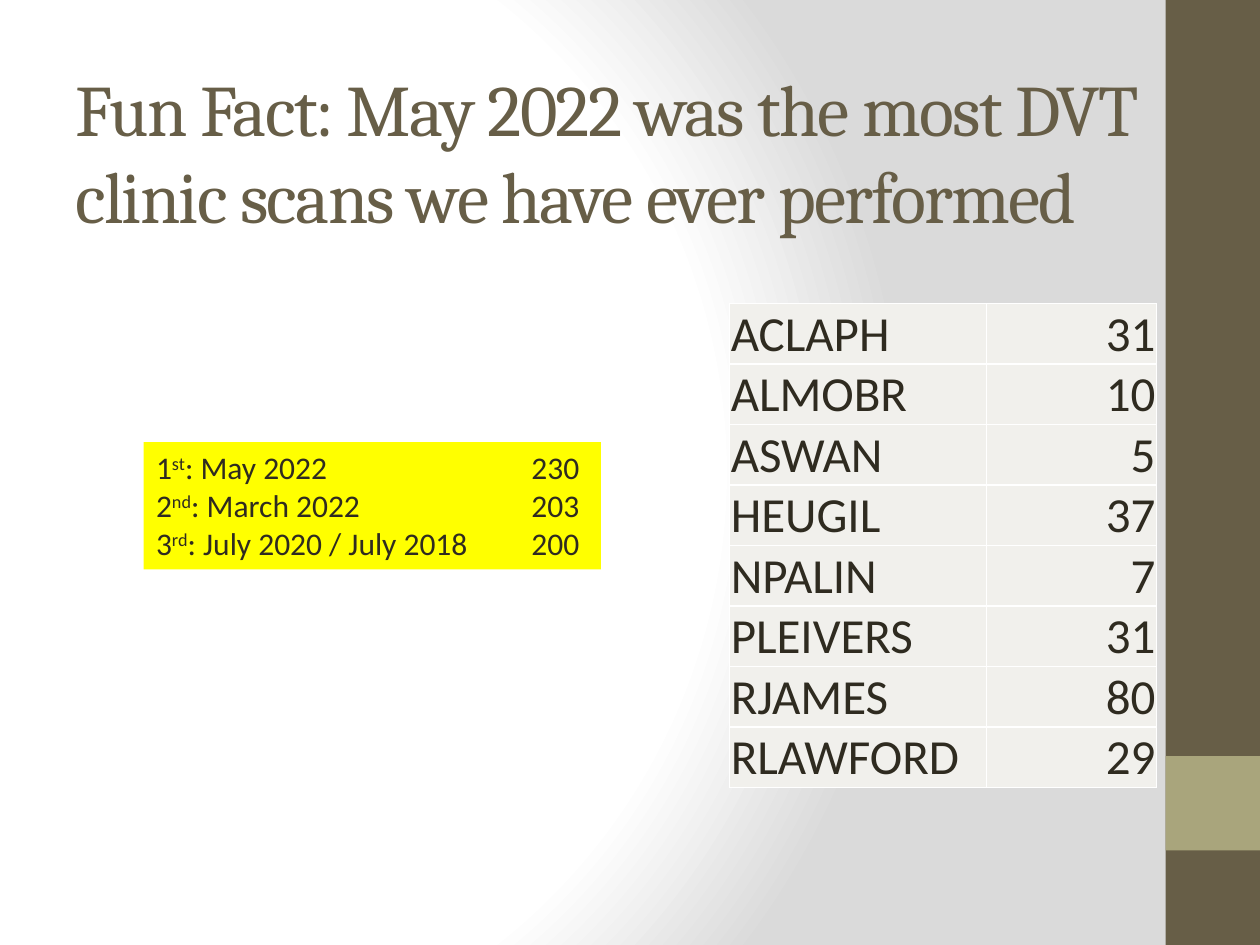
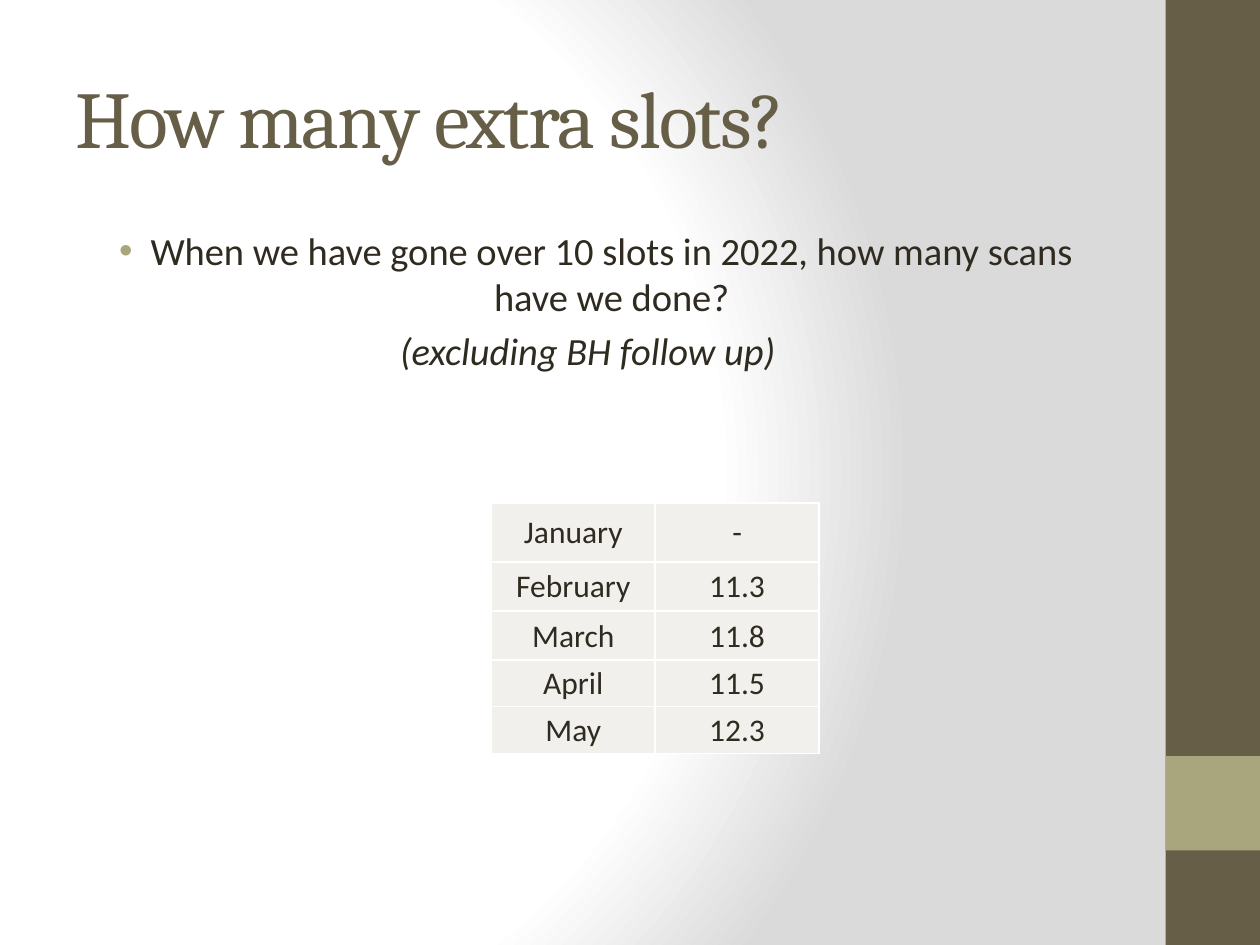
from lxml.etree import SubElement
from pptx import Presentation
from pptx.dml.color import RGBColor
from pptx.enum.shapes import MSO_SHAPE as Preset
from pptx.enum.text import MSO_ANCHOR as Anchor, PP_ALIGN as Align
from pptx.oxml import parse_xml
from pptx.oxml.ns import nsdecls, qn
from pptx.util import Inches, Pt

COLOURS = {
    "brown": "675E47", "olive": "A9A57C", "ink": "2F2B20", "cell": "F1F0EC",
    "yellow": "FFFF00", "white": "FFFFFF", "grey": "DADADA",
}
HEADING_FONT, BODY_FONT = "Cambria", "Calibri"
SCANS_BY_USER = [
    ("ACLAPH", "31"), ("ALMOBR", "10"), ("ASWAN", "5"), ("HEUGIL", "37"),
    ("NPALIN", "7"), ("PLEIVERS", "31"), ("RJAMES", "80"), ("RLAWFORD", "29"),
]
SCANS_BY_MONTH = [
    ("January", "-"), ("February", "11.3"), ("March", "11.8"),
    ("April", "11.5"), ("May", "12.3"),
]
RECORD_MONTHS = [
    ("1", "st", ": May 2022\t230"),
    ("2", "nd", ": March 2022\t203"),
    ("3", "rd", ": July 2020 / July 2018\t200"),
]


def colour(name):
    """Return the palette colour called name."""
    return RGBColor.from_string(COLOURS[name])


def style_runs(paragraph, size, name="ink", font=BODY_FONT):
    """Give every run of a paragraph its font, size and colour."""
    for run in paragraph.runs:
        run.font.name = font
        run.font.size = Pt(size)
        run.font.color.rgb = colour(name)


def add_background(slide):
    """Fill the slide with a white to grey circular gradient."""
    stops = "".join(
        f'<a:gs pos="{position}"><a:srgbClr val="{COLOURS[name]}"/></a:gs>'
        for position, name in ((0, "white"), (75000, "white"), (100000, "grey")))
    slide.element.cSld.insert(0, parse_xml(
        f'<p:bg {nsdecls("p", "a")}><p:bgPr><a:gradFill rotWithShape="1">'
        f'<a:gsLst>{stops}</a:gsLst><a:path path="circle">'
        '<a:fillToRect l="20000" t="50000" r="100000" b="50000"/></a:path>'
        '</a:gradFill><a:effectLst/></p:bgPr></p:bg>'))


def add_box(slide, left, top, width, height, fill):
    """Add a plain filled rectangle."""
    shape = slide.shapes.add_shape(
        Preset.RECTANGLE, *map(Inches, (left, top, width, height)))
    shape.shadow.inherit = False
    shape.fill.solid()
    shape.fill.fore_color.rgb = colour(fill)
    shape.line.fill.background()
    return shape


def add_text_frame(slide, left, top, width, height):
    """Add a wrapping text box and return its text frame."""
    text_box = slide.shapes.add_textbox(*map(Inches, (left, top, width, height)))
    text_box.text_frame.word_wrap = True
    return text_box.text_frame


def add_base_slide(presentation, title, size, width, height):
    """Add a slide with the shared background, side bands and title."""
    slide = presentation.slides.add_slide(presentation.slide_layouts[6])
    add_background(slide)
    add_box(slide, 9.25, 0, 0.75, 7.5, "brown")
    add_box(slide, 9.25, 6, 0.75, 0.75, "olive")
    text_frame = add_text_frame(slide, 0.5, 0.3, width, height)
    text_frame.vertical_anchor = Anchor.MIDDLE
    text_frame.text = title
    paragraph = text_frame.paragraphs[0]
    style_runs(paragraph, size, "brown", HEADING_FONT)
    paragraph.runs[0].font._element.set("spc", "-100")
    return slide


def add_cell_borders(cell):
    """Draw a thin white line on each side of a cell."""
    properties = cell._tc.get_or_add_tcPr()
    for index, side in enumerate("LRTB"):
        properties.insert(index, parse_xml(
            f'<a:ln{side} {nsdecls("a")} w="12700"><a:solidFill>'
            f'<a:srgbClr val="{COLOURS["white"]}"/></a:solidFill></a:ln{side}>'))


def fill_cell(cell, text, size, align, anchor):
    """Write and format one table cell."""
    cell.text = text
    cell.vertical_anchor = anchor
    cell.margin_left = cell.margin_right = cell.margin_top = Inches(0.01)
    cell.margin_bottom = 0
    cell.fill.solid()
    cell.fill.fore_color.rgb = colour("cell")
    add_cell_borders(cell)
    paragraph = cell.text_frame.paragraphs[0]
    paragraph.alignment = align
    style_runs(paragraph, size)


def add_value_table(slide, rows, left, top, widths, heights, size, aligns, anchor):
    """Add a table of names and values."""
    table = slide.shapes.add_table(
        len(rows), len(widths), Inches(left), Inches(top),
        Inches(sum(widths)), Inches(sum(heights))).table
    table.first_row = table.horz_banding = False
    for column, width in zip(table.columns, widths):
        column.width = Inches(width)
    for row, height, texts in zip(table.rows, heights, rows):
        row.height = Inches(height)
        for cell, text, align in zip(row.cells, texts, aligns):
            fill_cell(cell, text, size, align, anchor)


def add_record_box(slide):
    """Add the yellow ranking with right-aligned counts."""
    text_frame = add_box(slide, 1.14, 3.51, 3.63, 1.01, "yellow").text_frame
    text_frame.word_wrap = True
    text_frame.vertical_anchor = Anchor.TOP
    text_frame.text = "\n".join(number for number, _, _ in RECORD_MONTHS)
    for paragraph, (_, suffix, label) in zip(text_frame.paragraphs, RECORD_MONTHS):
        paragraph.alignment = Align.LEFT
        for text in (suffix, label):
            paragraph.add_run().text = text
        style_runs(paragraph, 18)
        paragraph.runs[1].font._element.set("baseline", "30000")
        tabs = SubElement(paragraph._p.get_or_add_pPr(), qn("a:tabLst"))
        SubElement(tabs, qn("a:tab"), pos=str(Inches(3.36)), algn="r")


def add_bullet(paragraph):
    """Give a paragraph a hanging olive bullet."""
    properties = paragraph._p.get_or_add_pPr()
    properties.set("marL", str(Inches(0.38)))
    properties.set("indent", str(Inches(-0.25)))
    bullet_colour = SubElement(properties, qn("a:buClr"))
    SubElement(bullet_colour, qn("a:srgbClr"), val=COLOURS["olive"])
    SubElement(properties, qn("a:buFont"), typeface="Arial")
    SubElement(properties, qn("a:buChar"), char="•")


def add_question(slide):
    """Add the bulleted question and its italic remark."""
    text_frame = add_text_frame(slide, 0.5, 1.75, 8.33, 5.25)
    text_frame.text = (
        "When we have gone over 10 slots in 2022, how many scans have we done?\n"
        "(excluding BH follow up)")
    for paragraph in text_frame.paragraphs:
        paragraph.alignment = Align.CENTER
        paragraph.space_before = Pt(4.4)
        style_runs(paragraph, 22)
    question, remark = text_frame.paragraphs
    add_bullet(question)
    remark.runs[0].font.italic = True


def main():
    """Build both slides and save the presentation."""
    presentation = Presentation()
    presentation.slide_width, presentation.slide_height = Inches(10), Inches(7.5)

    record_slide = add_base_slide(
        presentation,
        "Fun Fact: May 2022 was the most DVT clinic scans we have ever performed",
        41.4, 9, 1.8)
    add_value_table(
        record_slide, SCANS_BY_USER, 5.79, 2.41, (2.04, 1.35),
        [0.48] * len(SCANS_BY_USER), 28, (Align.LEFT, Align.RIGHT), Anchor.BOTTOM)
    add_record_box(record_slide)

    slots_slide = add_base_slide(
        presentation, "How many extra slots?", 46, 8.33, 1.25)
    add_question(slots_slide)
    add_value_table(
        slots_slide, SCANS_BY_MONTH, 3.9, 3.99, (1.3, 1.3),
        (0.47, 0.39, 0.39, 0.37, 0.37), 18, (Align.CENTER,) * 2, Anchor.MIDDLE)

    presentation.save("out.pptx")


if __name__ == "__main__":
    main()
